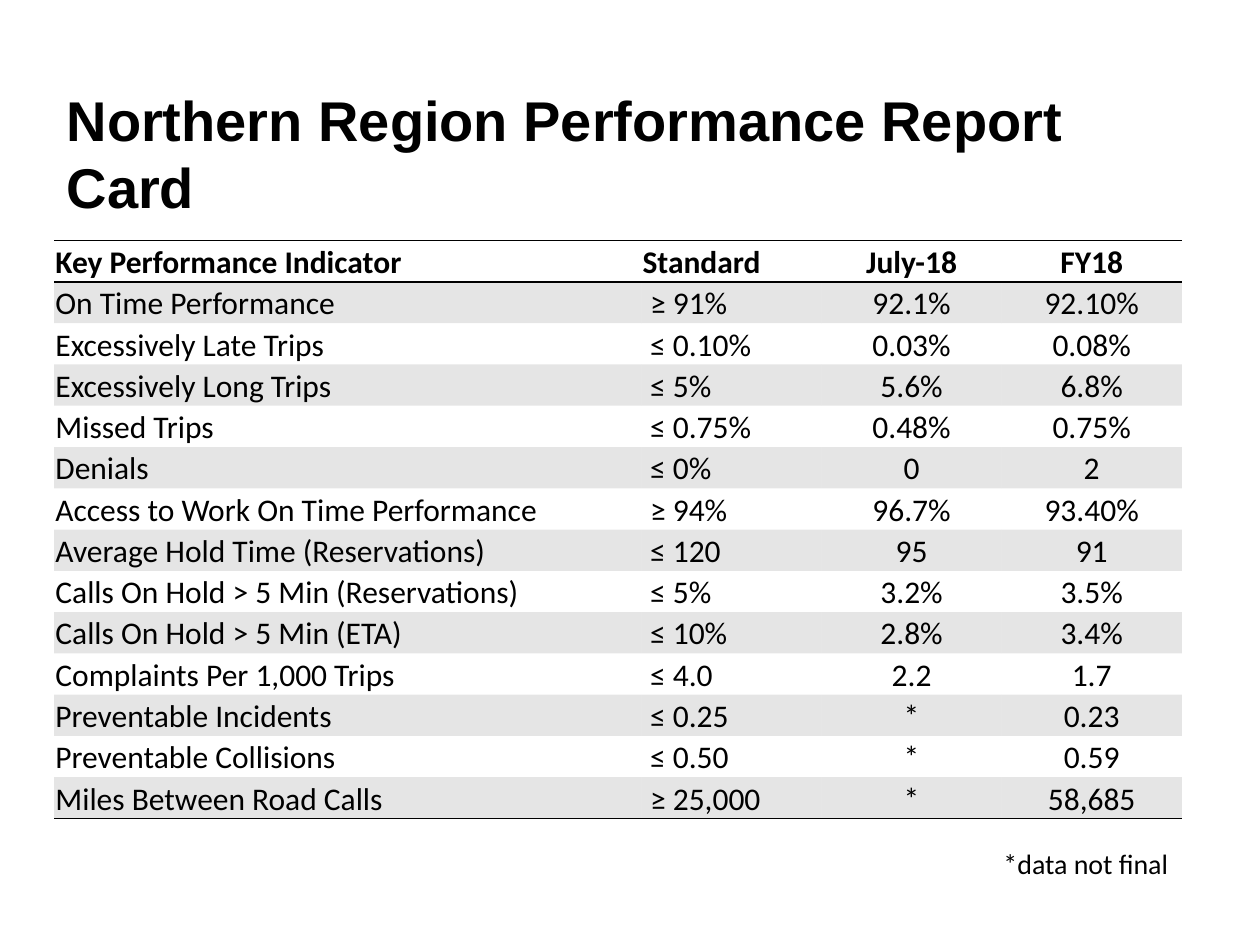
import pptx
import pptx.dml.color
import pptx.enum.text
import pptx.oxml
import pptx.oxml.ns
import pptx.util
from pptx.util import Inches

COLORS = {"text": "000000", "rule": "000000", "band": "808080"}
BAND_OPACITY = 20  # percent
PLAIN_TABLE_STYLE = "{2D5ABB26-0587-4C30-8999-92F81FD0307C}"

ALIGN = pptx.enum.text.PP_ALIGN
ANCHOR = pptx.enum.text.MSO_ANCHOR

ROWS = [
    ("Key Performance Indicator", "Standard", "July-18", "FY18"),
    ("On Time Performance", "≥ 91%", "92.1%", "92.10%"),
    ("Excessively Late Trips", "≤ 0.10%", "0.03%", "0.08%"),
    ("Excessively Long Trips", "≤ 5%", "5.6%", "6.8%"),
    ("Missed Trips", "≤ 0.75%", "0.48%", "0.75%"),
    ("Denials", "≤ 0%", "0", "2"),
    ("Access to Work On Time Performance", "≥ 94%", "96.7%", "93.40%"),
    ("Average Hold Time (Reservations)", "≤ 120", "95", "91"),
    ("Calls On Hold > 5 Min (Reservations)", "≤ 5%", "3.2%", "3.5%"),
    ("Calls On Hold > 5 Min (ETA)", "≤ 10%", "2.8%", "3.4%"),
    ("Complaints Per 1,000 Trips", "≤ 4.0", "2.2", "1.7"),
    ("Preventable Incidents", "≤ 0.25", "*", "0.23"),
    ("Preventable Collisions", "≤ 0.50", "*", "0.59"),
    ("Miles Between Road Calls", "≥ 25,000", "*", "58,685"),
]
COLUMN_WIDTHS = (4.66, 1.43, 1.43, 1.43)


def write_text(frame, text, size, font="Calibri", bold=False, align=ALIGN.LEFT):
    para = frame.paragraphs[0]
    para.alignment = align
    span = para.add_run()
    span.text = text
    span.font.name = font
    span.font.size = pptx.util.Pt(size)
    span.font.bold = bold
    span.font.color.rgb = pptx.dml.color.RGBColor.from_string(COLORS["text"])


def add_text_box(page, box, text, anchor=ANCHOR.TOP, **text_format):
    frame = page.shapes.add_textbox(*map(Inches, box)).text_frame
    frame.word_wrap = True
    frame.vertical_anchor = anchor
    write_text(frame, text, **text_format)


def rule_cell(cell, edge):
    """Draw a 1 pt line on the top (T) or bottom (B) edge of a cell."""
    line = pptx.oxml.parse_xml(
        f'<a:ln{edge} {pptx.oxml.ns.nsdecls("a")} w="12700"><a:solidFill>'
        f'<a:srgbClr val="{COLORS["rule"]}"/></a:solidFill></a:ln{edge}>'
    )
    cell._tc.get_or_add_tcPr().append(line)


def shade_cell(cell):
    cell.fill.solid()
    cell.fill.fore_color.rgb = pptx.dml.color.RGBColor.from_string(COLORS["band"])
    color = cell._tc.tcPr.find(".//" + pptx.oxml.ns.qn("a:solidFill") + "[last()]/"
                               + pptx.oxml.ns.qn("a:srgbClr"))
    fill = cell._tc.tcPr.find(pptx.oxml.ns.qn("a:solidFill"))
    color = fill.find(pptx.oxml.ns.qn("a:srgbClr"))
    alpha = pptx.oxml.parse_xml(
        f'<a:alpha {pptx.oxml.ns.nsdecls("a")} val="{BAND_OPACITY * 1000}"/>'
    )
    color.append(alpha)


def format_cell(cell, text, row, column):
    is_header = row == 0
    cell.margin_left = cell.margin_right = cell.margin_top = Inches(0.01)
    cell.margin_bottom = 0
    if column == 1 and not is_header:
        cell.margin_left = Inches(0.07)
    cell.vertical_anchor = ANCHOR.BOTTOM
    write_text(cell.text_frame, text, size=18, bold=is_header,
               align=ALIGN.CENTER if column > 1 else ALIGN.LEFT)
    # Lines go before the fill in the cell properties
    if is_header:
        rule_cell(cell, "T")
    if row in (0, len(ROWS) - 1):
        rule_cell(cell, "B")
    if row % 2:
        shade_cell(cell)
    else:
        cell.fill.background()


def add_report_table(page, box):
    left, top, width, height = map(Inches, box)
    table = page.shapes.add_table(
        len(ROWS), len(COLUMN_WIDTHS), left, top, width, height).table
    table.first_row = table.horz_banding = False
    table._tbl.tblPr.find(pptx.oxml.ns.qn("a:tableStyleId")).text = PLAIN_TABLE_STYLE
    for column, column_width in zip(table.columns, COLUMN_WIDTHS):
        column.width = Inches(column_width)
    for row, values in enumerate(ROWS):
        table.rows[row].height = height // len(ROWS)
        for column, text in enumerate(values):
            format_cell(table.cell(row, column), text, row, column)


def main():
    deck = pptx.Presentation()
    deck.slide_width, deck.slide_height = Inches(10), Inches(7.5)
    page = deck.slides.add_slide(deck.slide_layouts[6])

    # Title
    add_text_box(page, (0.43, 0.89, 8.39, 0.64),
                 "Northern Region Performance Report Card",
                 anchor=ANCHOR.MIDDLE, size=32, font="Arial", bold=True)
    # Indicators
    add_report_table(page, (0.43, 1.91, 8.95, 4.59))
    # Footnote
    add_text_box(page, (7.16, 6.67, 2.21, 0.37), "*data not final",
                 size=16, align=ALIGN.RIGHT)

    deck.save("out.pptx")


if __name__ == "__main__":
    main()
